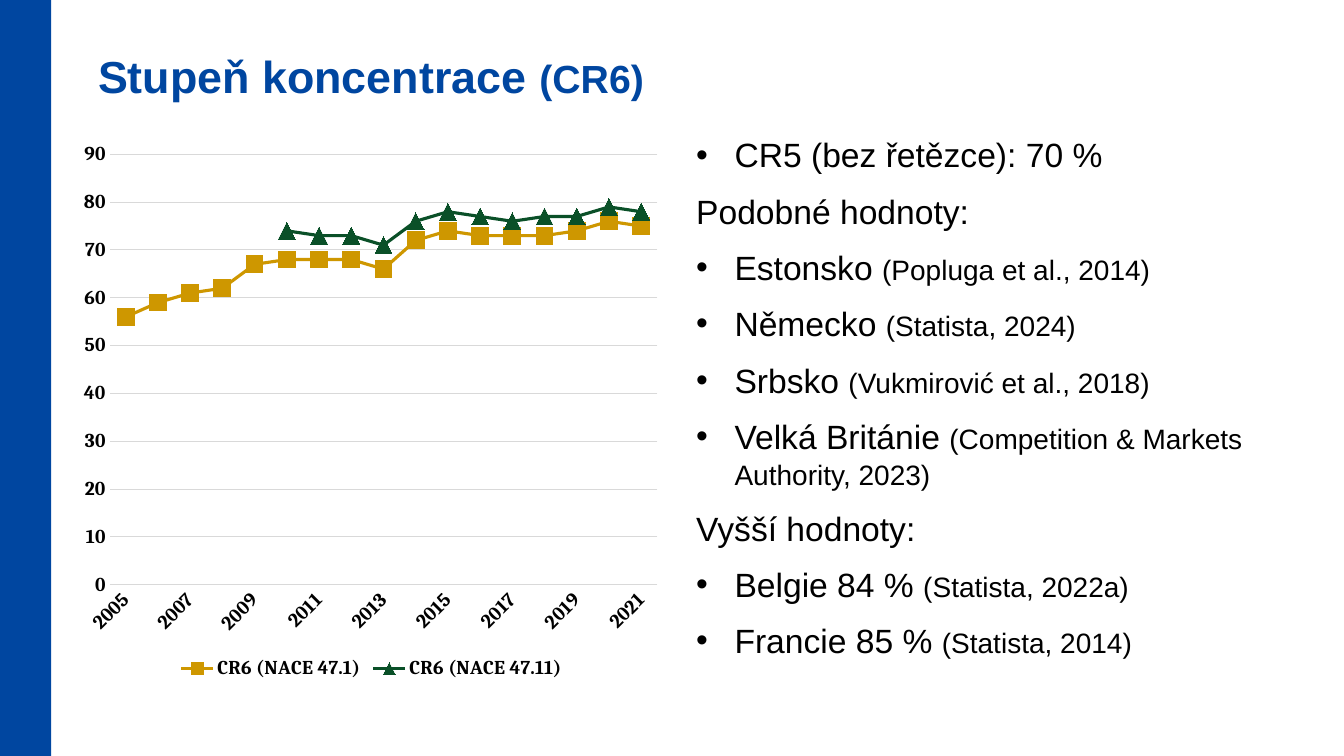
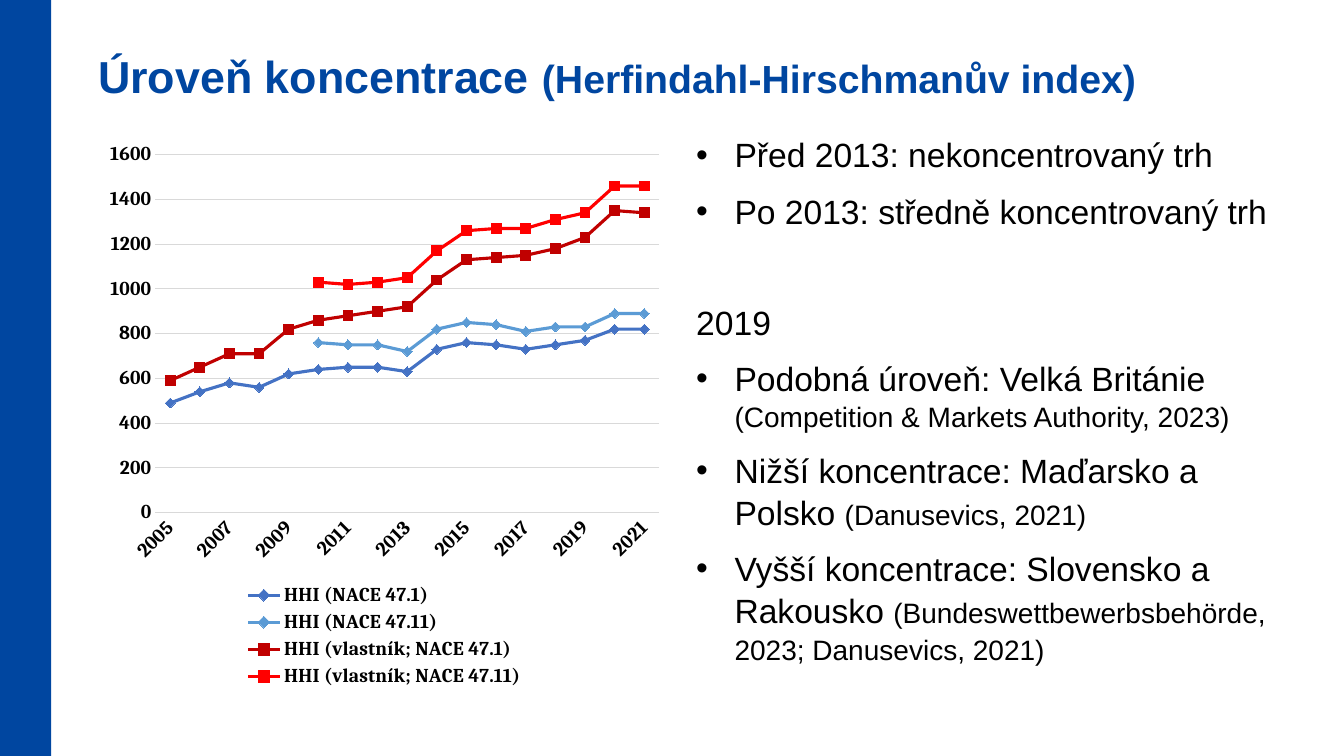
from lxml.etree import SubElement
from pptx import Presentation
from pptx.chart.data import CategoryChartData
from pptx.dml.color import RGBColor
from pptx.enum.chart import XL_CHART_TYPE, XL_LEGEND_POSITION, XL_MARKER_STYLE, XL_TICK_MARK
from pptx.enum.shapes import MSO_SHAPE
from pptx.oxml import parse_xml
from pptx.oxml.ns import nsdecls, qn
from pptx.util import Inches, Pt

WIDTH, HEIGHT = Inches(13.33), Inches(7.5)
BLUE, BLACK, GREY = "0046A0", "000000", "D9D9D9"
LEFT, TOP, HALF, RIGHT = 0.073, 0.175, 0.443, 0.518
INDENT = Inches(0.38)
TITLE = {"size": Pt(32), "name": "Arial", "bold": True}
SUBTITLE = {**TITLE, "size": Pt(28)}
BODY = {"size": Pt(24), "name": "Arial"}
CITATION = {**BODY, "size": Pt(20)}
CHART_TEXT = {"size": Pt(14), "name": "Cambria", "bold": True}
YEARS = [str(year) for year in range(2005, 2022)]
SQUARE, TRIANGLE, DIAMOND = (
    XL_MARKER_STYLE.SQUARE, XL_MARKER_STYLE.TRIANGLE, XL_MARKER_STYLE.DIAMOND)

CR6_SERIES = [
    ("CR6 (NACE 47.1)", "CE9700", SQUARE,
     [56, 59, 61, 62, 67, 68, 68, 68, 66, 72, 74, 73, 73, 73, 74, 76, 75]),
    ("CR6 (NACE 47.11)", "0A5028", TRIANGLE,
     [74, 73, 73, 71, 76, 78, 77, 76, 77, 77, 79, 78]),
]
HHI_SERIES = [
    ("HHI (NACE 47.1)", "4472C4", DIAMOND,
     [490, 540, 580, 560, 620, 640, 650, 650, 630, 730, 760, 750, 730, 750, 770, 820, 820]),
    ("HHI (NACE 47.11)", "5B9BD5", DIAMOND,
     [760, 750, 750, 720, 820, 850, 840, 810, 830, 830, 890, 890]),
    ("HHI (vlastník; NACE 47.1)", "C00000", SQUARE,
     [590, 650, 710, 710, 820, 860, 880, 900, 920, 1040, 1130, 1140, 1150, 1180, 1230, 1350, 1340]),
    ("HHI (vlastník; NACE 47.11)", "FF0000", SQUARE,
     [1030, 1020, 1030, 1050, 1170, 1260, 1270, 1270, 1310, 1340, 1460, 1460]),
]
CR6_NOTES = [
    ("•", "CR5 (bez řetězce): 70 %", "", 0),
    ("", "Podobné hodnoty:", "", 10),
    ("•", "Estonsko ", "(Popluga et al., 2014)", 10),
    ("•", "Německo ", "(Statista, 2024)", 10),
    ("•", "Srbsko ", "(Vukmirović et al., 2018)", 10),
    ("•", "Velká Británie ", "(Competition & Markets Authority, 2023)", 10),
    ("", "Vyšší hodnoty:", "", 10),
    ("•", "Belgie 84 % ", "(Statista, 2022a)", 10),
    ("•", "Francie 85 % ", "(Statista, 2014)", 10),
]
HHI_NOTES = [
    ("•", "Před 2013: nekoncentrovaný trh", "", 0),
    ("•", "Po 2013: středně koncentrovaný trh", "", 10),
    ("", "2019", "", 49),
    ("•", "Podobná úroveň: Velká Británie ", "(Competition & Markets Authority, 2023)", 10),
    ("•", "Nižší koncentrace: Maďarsko a Polsko ", "(Danusevics, 2021)", 10),
    ("•", "Vyšší koncentrace: Slovensko a Rakousko ",
     "(Bundeswettbewerbsbehörde, 2023; Danusevics, 2021)", 10),
]


def rgb(color):
    """Turn a hex string into a colour."""
    return RGBColor.from_string(color)


def area(x, y, w, h):
    """Turn shares of the slide into lengths."""
    return int(x * WIDTH), int(y * HEIGHT), int(w * WIDTH), int(h * HEIGHT)


def set_font(font, values, color=BLACK):
    """Apply a dict of font values and a colour."""
    for name, value in values.items():
        setattr(font, name, value)
    font.color.rgb = rgb(color)


def set_line(line, color, width):
    """Give a line its colour and width in points."""
    line.color.rgb = rgb(color)
    line.width = Pt(width)


def add_text_box(s, *box):
    """Add a wrapping text box without margins."""
    tf = s.shapes.add_textbox(*area(*box)).text_frame
    tf.word_wrap = True
    for side in ("left", "top", "right", "bottom"):
        setattr(tf, f"margin_{side}", 0)
    return tf


def add_runs(p, parts, color=BLACK):
    """Add runs to a paragraph from pairs of text and font values."""
    p.line_spacing = 1.05
    for text, values in parts:
        if text:
            r = p.add_run()
            r.text = text
            set_font(r.font, values, color)


def set_bullet(p, char):
    """Give a paragraph a hanging bullet."""
    pPr = p._p.get_or_add_pPr()
    pPr.set("marL", str(INDENT))
    pPr.set("indent", str(-INDENT))
    SubElement(pPr, qn("a:buFont")).set("typeface", "Arial")
    SubElement(pPr, qn("a:buChar")).set("char", char)


def add_slide(prs, title, subtitle):
    """Add a slide with the side band and a two-size title."""
    s = prs.slides.add_slide(prs.slide_layouts[6])
    sp = s.shapes.add_shape(MSO_SHAPE.RECTANGLE, *area(0, 0, 0.038, 1))
    sp.shadow.inherit = False
    sp.fill.solid()
    sp.fill.fore_color.rgb = rgb(BLUE)
    sp.line.fill.background()
    tf = add_text_box(s, LEFT, 0.061, 0.888, 0.09)
    add_runs(tf.paragraphs[0], [(title, TITLE), (subtitle, SUBTITLE)], BLUE)
    return s


def add_notes_column(s, notes):
    """Add the right column of bullets and lead-in lines."""
    tf = add_text_box(s, RIGHT, TOP, HALF, 0.73)
    for i, (bullet, text, citation, gap) in enumerate(notes):
        p = tf.add_paragraph() if i else tf.paragraphs[0]
        if bullet:
            set_bullet(p, bullet)
        p.space_before = Pt(gap)
        add_runs(p, [(text, BODY), (citation, CITATION)])


def make_layout(x, y, w, h, inner=False):
    """Build a manual chart layout from shares of the chart."""
    target = '<c:layoutTarget val="inner"/>' if inner else ""
    modes = '<c:xMode val="edge"/><c:yMode val="edge"/>'
    sizes = "".join(f'<c:{k} val="{v}"/>' for k, v in zip("xywh", (x, y, w, h)))
    return parse_xml(f'<c:layout {nsdecls("c")}><c:manualLayout>{target}{modes}{sizes}'
                     "</c:manualLayout></c:layout>")


def style_axes(chart, top, step):
    """Style both axes and scale the value axis."""
    years, values = chart.category_axis, chart.value_axis
    for axis in (years, values):
        axis.major_tick_mark = axis.minor_tick_mark = XL_TICK_MARK.NONE
        set_font(axis.tick_labels.font, CHART_TEXT)
    set_line(years.format.line, GREY, 0.75)
    years._element.txPr.find(qn("a:bodyPr")).set("rot", "-2700000")
    skip = parse_xml(f'<c:tickLblSkip {nsdecls("c")} val="2"/>')
    years._element.find(qn("c:noMultiLvlLbl")).addprevious(skip)
    values.format.line.fill.background()
    values.minimum_scale, values.maximum_scale, values.major_unit = 0, top, step
    values.tick_labels.number_format = "0"
    values.tick_labels.number_format_is_linked = False
    set_line(values.major_gridlines.format.line, GREY, 0.75)


def add_line_chart(s, box, series, marker_size, scale, plot, legend=None):
    """Add a line chart whose series all end in the last year."""
    data = CategoryChartData()
    data.categories = YEARS
    for name, _, _, values in series:
        data.add_series(name, [None] * (len(YEARS) - len(values)) + values)
    chart = s.shapes.add_chart(XL_CHART_TYPE.LINE_MARKERS, *area(*box), data).chart
    set_font(chart.font, {"size": Pt(10), "name": "Arial"})
    chart.has_title = False
    chart.plots[0].vary_by_categories = False
    for line, (_, color, marker, _) in zip(chart.plots[0].series, series):
        line.smooth = False
        set_line(line.format.line, color, 2.25)
        line.marker.style, line.marker.size = marker, marker_size
        line.marker.format.fill.solid()
        line.marker.format.fill.fore_color.rgb = rgb(color)
        set_line(line.marker.format.line, color, 0.75)
    style_axes(chart, *scale)
    chart.has_legend = True
    chart.legend.position = XL_LEGEND_POSITION.BOTTOM
    chart.legend.include_in_layout = False
    set_font(chart.legend.font, CHART_TEXT)
    plot_area = chart._chartSpace.chart.plotArea
    for old in plot_area.findall(qn("c:layout")):
        plot_area.remove(old)
    plot_area.insert(0, make_layout(*plot, inner=True))
    if legend:
        for old in chart.legend._element.findall(qn("c:layout")):
            chart.legend._element.remove(old)
        chart.legend._element.find(qn("c:legendPos")).addnext(make_layout(*legend))


def main():
    """Build and save both slides."""
    prs = Presentation()
    prs.slide_width, prs.slide_height = WIDTH, HEIGHT

    s = add_slide(prs, "Stupeň koncentrace ", "(CR6)")
    add_notes_column(s, CR6_NOTES)
    add_line_chart(s, (0.055, TOP, HALF, 0.73), CR6_SERIES, 12, (90, 10),
                   plot=(0.06, 0.04, 0.92, 0.78))

    s = add_slide(prs, "Úroveň koncentrace ", "(Herfindahl-Hirschmanův index)")
    add_notes_column(s, HHI_NOTES)
    add_line_chart(s, (LEFT, TOP, 0.426, 0.74), HHI_SERIES, 7, (1600, 200),
                   plot=(0.1, 0.04, 0.88, 0.64), legend=(0.25, 0.8, 0.5, 0.2))

    prs.save("out.pptx")


if __name__ == "__main__":
    main()
